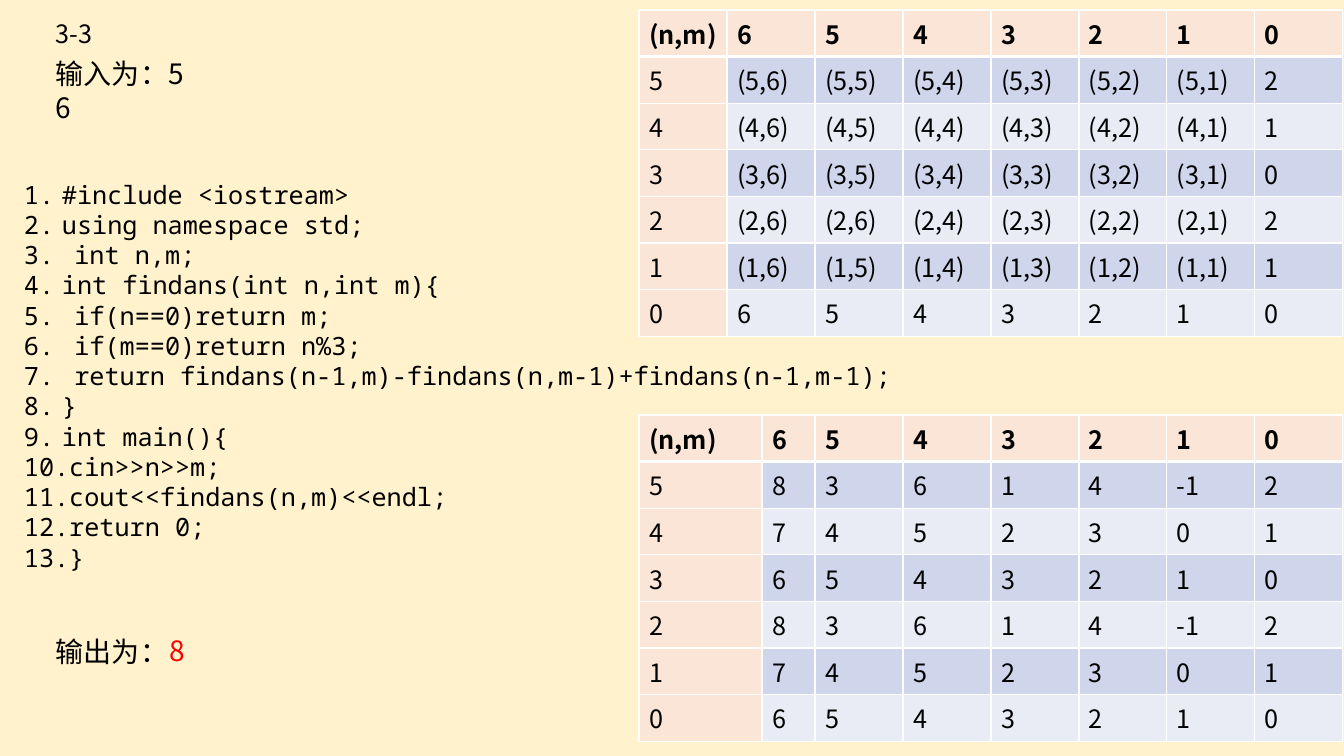
import pptx
import pptx.dml.color
import pptx.enum.text
import pptx.oxml
import pptx.oxml.ns
import pptx.util

RGB = pptx.dml.color.RGBColor
CREAM = RGB(0xFF, 0xF2, 0xCC)
PEACH = RGB(0xFB, 0xE5, 0xD6)
BLUE = RGB(0xCF, 0xD5, 0xEA)
PALE = RGB(0xE9, 0xEB, 0xF5)
BLACK = RGB(0, 0, 0)
RED = RGB(0xFF, 0, 0)
SANS = "Noto Sans CJK SC"
MONO = "Noto Sans Mono"
PX = 914400 / 100.8
NS = 'xmlns:a="http://schemas.openxmlformats.org/drawingml/2006/main"'


def add_run(para, text, size, font=SANS, color=BLACK, bold=False):
    run = para.add_run()
    run.text = text
    run.font.size = pptx.util.Pt(size)
    run.font.name = font
    run.font.bold = bold
    run.font.color.rgb = color
    east = pptx.oxml.parse_xml(f'<a:ea {NS} typeface="{font}"/>')
    run.font._element.find(pptx.oxml.ns.qn("a:latin")).addnext(east)


def add_box(left, top, width, height, wrap):
    box = slide.shapes.add_textbox(*[round(v * PX) for v in (left, top, width, height)])
    box.text_frame.word_wrap = wrap
    box.text_frame.auto_size = pptx.enum.text.MSO_AUTO_SIZE.NONE
    return box.text_frame


prs = pptx.Presentation()
prs.slide_width = round(1344 * PX)
prs.slide_height = round(756 * PX)
slide = prs.slides.add_slide(prs.slide_layouts[6])
slide.background.fill.solid()
slide.background.fill.fore_color.rgb = CREAM

# Tables: the recursive calls above, their values below
head = ["(n,m)", "6", "5", "4", "3", "2", "1", "0"]
calls = [head]
for n in range(5, 0, -1):
    pairs = [f"({n},{m})" for m in range(6, 0, -1)]
    calls.append([str(n), *pairs, str(n % 3)])
calls.append(["0", *head[1:]])
calls[4][2] = "(2,6)"

cycle = ["8 3 6 1 4 -1 2", "7 4 5 2 3 0 1", "6 5 4 3 2 1 0"]
values = [head]
for n in range(5, -1, -1):
    values.append([str(n), *cycle[(5 - n) % 3].split()])

for top, data, first, second in ((10, calls, 88, 88), (415, values, 123, 53)):
    frame = slide.shapes.add_table(
        7, 8, round(639 * PX), round(top * PX), round(704 * PX), round(287 * PX))
    table = frame.table
    for col, width in zip(table.columns, [first, second] + [88] * 6):
        col.width = round(width * PX)
    for r, row in enumerate(data):
        table.rows[r].height = round(41 * PX)
        for c, text in enumerate(row):
            cell = table.cell(r, c)
            add_run(cell.text_frame.paragraphs[0], text, 18, bold=r == 0)
            props = cell._tc.get_or_add_tcPr()
            for side in "LRTB":
                thick = (r == 0 and side == "B") or (r == 1 and side == "T")
                props.append(pptx.oxml.parse_xml(
                    f'<a:ln{side} {NS} w="{38100 if thick else 12700}"><a:solidFill>'
                    f'<a:srgbClr val="FFFFFF"/></a:solidFill></a:ln{side}>'))
            cell.fill.solid()
            cell.fill.fore_color.rgb = PEACH if r == 0 or c == 0 else BLUE if r % 2 else PALE

# Heading, input and output
for left, top, width, height, text, size, color, wrap in (
    (46, 13, 60, 40, "3-3", 18, BLACK, False),
    (46, 52, 168, 44, "输入为：5 6", 20, BLACK, True),
    (46, 630, 133, 44, "输出为：", 20, BLACK, False),
    (160, 629, 35, 44, "8", 20, RED, False),
):
    para = add_box(left, top, width, height, wrap).paragraphs[0]
    para.line_spacing = pptx.util.Pt(size * 1.2)
    add_run(para, text, size, color=color)

# Numbered code listing
code = """#include <iostream>
using namespace std;
\tint n,m;
int findans(int n,int m){
\tif(n==0)return m;
\tif(m==0)return n%3;
\treturn findans(n-1,m)-findans(n,m-1)+findans(n-1,m-1);
}
int main(){
cin>>n>>m;
cout<<findans(n,m)<<endl;
return 0;
}"""
body = add_box(14, 174, 1005, 407, True)
for i, line in enumerate(code.split("\n")):
    para = body.add_paragraph() if i else body.paragraphs[0]
    para.line_spacing = pptx.util.Pt(21.6)
    props = para._p.get_or_add_pPr()
    props.set("marL", str(round(38 * PX)))
    props.set("indent", str(round(-38 * PX)))
    props.append(pptx.oxml.parse_xml(f'<a:buAutoNum {NS} type="arabicPeriod"/>'))
    add_run(para, line, 18, MONO)

prs.save("out.pptx")
